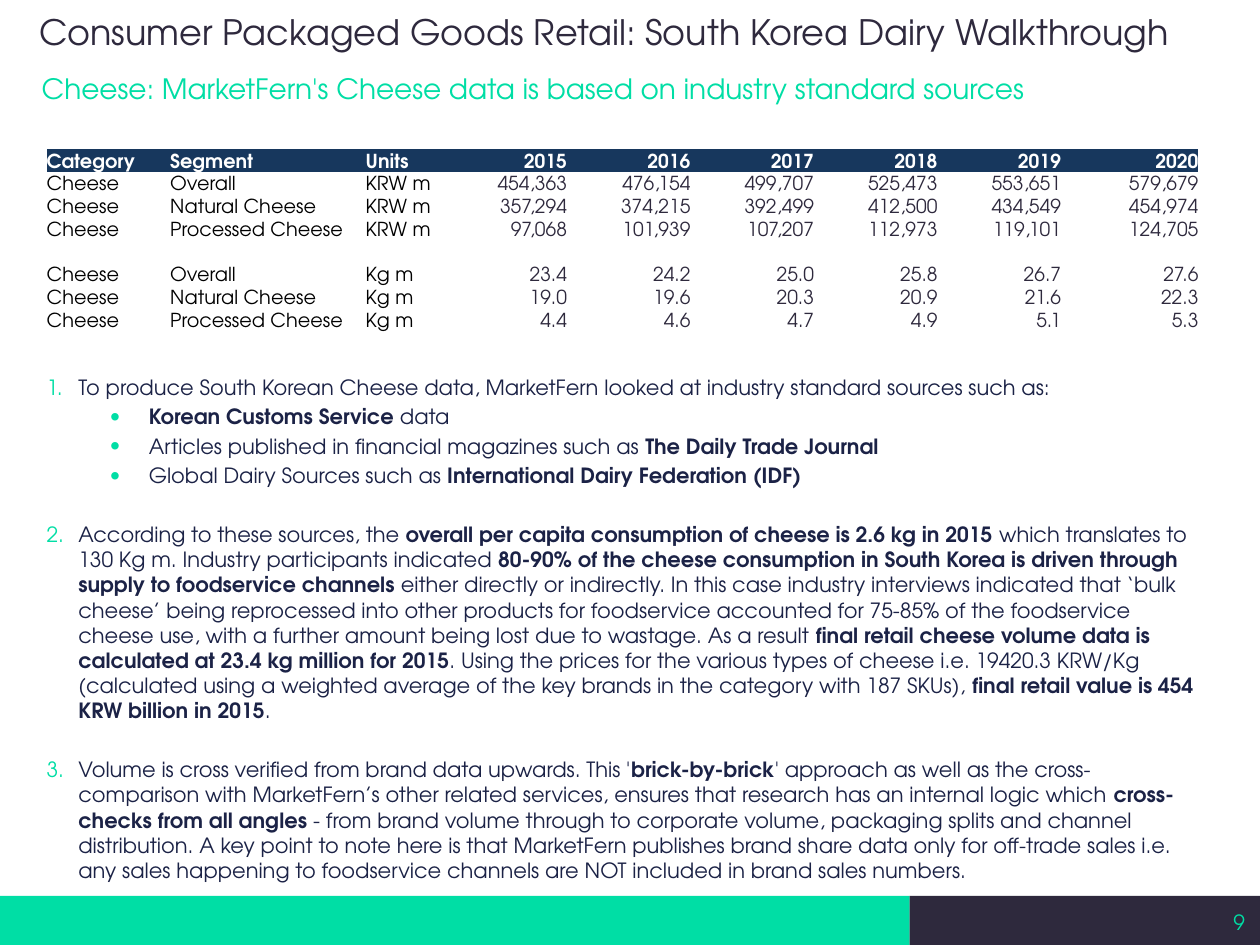
from lxml import etree
from pptx import Presentation
from pptx.dml.color import RGBColor
from pptx.enum.shapes import MSO_SHAPE
from pptx.enum.text import MSO_ANCHOR, MSO_AUTO_SIZE, PP_ALIGN
from pptx.oxml.ns import qn
from pptx.util import Cm, Pt

LEFT, RIGHT = PP_ALIGN.LEFT, PP_ALIGN.RIGHT
TOP, MIDDLE, BOTTOM = MSO_ANCHOR.TOP, MSO_ANCHOR.MIDDLE, MSO_ANCHOR.BOTTOM
FONT = "TeX Gyre Adventor"
GREEN, DARK, NAVY, HEADER_BLUE = "00DEA5", "2E293D", "1B2246", "17375D"
BLACK, WHITE = "000000", "FFFFFF"
NO_GRID_STYLE = "{2D5ABB26-0587-4C30-8999-92F81FD0307C}"

# Content
HEADING = "Consumer Packaged Goods Retail: South Korea Dairy Walkthrough"
SUBTITLE = "Cheese: MarketFern's Cheese data is based on industry standard sources"
PAGE_NUMBER = "9"

HEADER = ["Category", "Segment", "Units", "2015", "2016", "2017", "2018", "2019", "2020"]
SEGMENTS = ["Overall", "Natural Cheese", "Processed Cheese"]
FIGURES = {
    "KRW m": [
        ["454,363", "476,154", "499,707", "525,473", "553,651", "579,679"],
        ["357,294", "374,215", "392,499", "412,500", "434,549", "454,974"],
        ["97,068", "101,939", "107,207", "112,973", "119,101", "124,705"],
    ],
    "Kg m": [
        ["23.4", "24.2", "25.0", "25.8", "26.7", "27.6"],
        ["19.0", "19.6", "20.3", "20.9", "21.6", "22.3"],
        ["4.4", "4.6", "4.7", "4.9", "5.1", "5.3"],
    ],
}

# Numbered points with their sub-points; parts alternate plain, bold, plain, ...
POINTS = [
    (["To produce South Korean Cheese data, MarketFern looked at industry standard "
      "sources such as:"],
     [["", "Korean Customs Service ", "data"],
      ["Articles published in financial magazines such as ", "The Daily Trade Journal"],
      ["Global Dairy Sources such as ", "International Dairy Federation (IDF)"]]),
    (["According to these sources, the ",
      "overall per capita consumption of cheese is 2.6 kg in 2015 ",
      "which translates to 130 Kg m. Industry participants indicated ",
      "80-90% of the cheese consumption in South Korea is driven through supply to "
      "foodservice channels ",
      "either directly or indirectly. In this case industry interviews indicated that "
      "‘bulk cheese’ being reprocessed into other products for foodservice accounted "
      "for 75-85% of the foodservice cheese use, with a further amount being lost due "
      "to wastage. As a result ",
      "final retail cheese volume data is calculated at 23.4 kg million for 2015",
      ". Using the prices for the various types of cheese i.e. 19420.3 KRW/Kg "
      "(calculated using a weighted average of the key brands in the category with "
      "187 SKUs), ",
      "final retail value is 454 KRW billion in 2015", "."], []),
    (["Volume is cross verified from brand data upwards. This '", "brick-by-brick",
      "' approach as well as the cross-comparison with MarketFern’s other related "
      "services, ensures that research has an internal logic which ",
      "cross-checks from all angles ",
      "- from brand volume through to corporate volume, packaging splits and channel "
      "distribution. A key point to note here is that MarketFern publishes brand share "
      "data only for off-trade sales i.e. any sales happening to foodservice channels "
      "are NOT included in brand sales numbers."], []),
]


def rgb(value):
    return RGBColor.from_string(value)


def style(paragraph, size, color, align=LEFT, bold=None):
    paragraph.alignment = align
    font = paragraph.font
    font.name, font.size, font.bold = FONT, Pt(size), bold
    font.color.rgb = rgb(color)


def place(shape, left, top, width, height):
    shape.left, shape.top, shape.width, shape.height = map(Cm, (left, top, width, height))


def set_frame(frame, anchor, left=0, top=0, right=0, bottom=0):
    frame.word_wrap = True
    frame.auto_size = MSO_AUTO_SIZE.NONE
    frame.vertical_anchor = anchor
    frame.margin_left, frame.margin_top = Cm(left), Cm(top)
    frame.margin_right, frame.margin_bottom = Cm(right), Cm(bottom)


def add_text_box(left, top, width, height):
    return slide.shapes.add_textbox(*map(Cm, (left, top, width, height))).text_frame


def add_bar(left, top, width, height, color):
    bar = slide.shapes.add_shape(MSO_SHAPE.RECTANGLE, *map(Cm, (left, top, width, height)))
    bar.shadow.inherit = False
    bar.fill.solid()
    bar.fill.fore_color.rgb = rgb(color)
    bar.line.fill.background()


def set_bullet(paragraph, left, hanging, tag, **attributes):
    props = paragraph._p.get_or_add_pPr()
    props.set("marL", str(Cm(left)))
    props.set("indent", str(-Cm(hanging)))
    color = etree.SubElement(props, qn("a:buClr"))
    etree.SubElement(color, qn("a:srgbClr"), val=GREEN)
    etree.SubElement(props, qn("a:buFont"), typeface=FONT)
    etree.SubElement(props, qn(tag), **attributes)


def add_parts(paragraph, parts):
    for index, part in enumerate(parts):
        if part:
            run = paragraph.add_run()
            run.text = part
            run.font.bold = index % 2 == 1


prs = Presentation()
prs.slide_width, prs.slide_height = Cm(25.4), Cm(19.05)
slide = prs.slides.add_slide(prs.slide_layouts[5])

# Footer bars and page number
add_bar(0, 18.06, 18.34, 0.99, GREEN)
add_bar(18.34, 18.06, 7.06, 0.99, DARK)
number = add_text_box(19.38, 18.08, 5.72, 1.02)
set_frame(number, MIDDLE)
number.text = PAGE_NUMBER
style(number.paragraphs[0], 12, GREEN, RIGHT)

# Heading and title
heading = add_text_box(0, 0, 25.4, 2.11)
set_frame(heading, TOP, left=0.79, top=0.22)
heading.text = HEADING
style(heading.paragraphs[0], 20, DARK)

title = slide.shapes.title
place(title, 0.84, 1.45, 23.75, 1.63)
set_frame(title.text_frame, TOP)
title.text_frame.text = SUBTITLE
style(title.text_frame.paragraphs[0], 16, GREEN)

# Numbered points
body = add_text_box(0.69, 7.42, 23.8, 10.29)
set_frame(body, TOP, left=0.25, top=0.13, right=0.25, bottom=0.13)
for order, (point, details) in enumerate(POINTS, start=1):
    paragraph = body.paragraphs[0] if order == 1 else body.add_paragraph()
    set_bullet(paragraph, 0.64, 0.64, "a:buAutoNum", type="arabicPeriod", startAt=str(order))
    if order > 1:
        paragraph.space_before = Pt(19.2)
    add_parts(paragraph, point)
    style(paragraph, 12, NAVY)
    for detail in details:
        paragraph = body.add_paragraph()
        paragraph.level = 1
        set_bullet(paragraph, 2.06, 0.79, "a:buChar", char="•")
        paragraph.space_before = Pt(2.4)
        add_parts(paragraph, detail)
        style(paragraph, 12, NAVY)

# Cheese table: one block of rows per unit, parted by an empty row
blocks = [[["Cheese", segment, unit, *values] for segment, values in zip(SEGMENTS, rows)]
          for unit, rows in FIGURES.items()]
grid = [HEADER, *blocks[0], [""] * len(HEADER), *blocks[1]]
widths = [2.49, 3.94, 1.85] + [2.49] * 6
row_height = 0.46
table = slide.shapes.add_table(len(grid), len(widths), Cm(0.94), Cm(3), Cm(sum(widths)),
                               Cm(row_height * len(grid))).table
table.first_row = table.horz_banding = False
table._tbl.tblPr.find(qn("a:tableStyleId")).text = NO_GRID_STYLE
for column, width in zip(table.columns, widths):
    column.width = Cm(width)
for r, values in enumerate(grid):
    table.rows[r].height = Cm(row_height)
    for c, value in enumerate(values):
        cell = table.cell(r, c)
        is_year = c >= 3
        is_last = c == len(widths) - 1
        cell.margin_left = cell.margin_top = cell.margin_bottom = 0
        cell.margin_right = Cm(0.28) if is_year and not is_last else 0
        cell.vertical_anchor = BOTTOM
        cell.text = value
        paragraph = cell.text_frame.paragraphs[0]
        color = WHITE if r == 0 else DARK if is_year else BLACK
        style(paragraph, 11, color, RIGHT if is_year else LEFT, r == 0)
        if not value:
            etree.SubElement(paragraph._p, qn("a:endParaRPr"), sz="1100")
        if r == 0:
            cell.fill.solid()
            cell.fill.fore_color.rgb = rgb(HEADER_BLUE)
        else:
            cell.fill.background()

prs.save("out.pptx")
